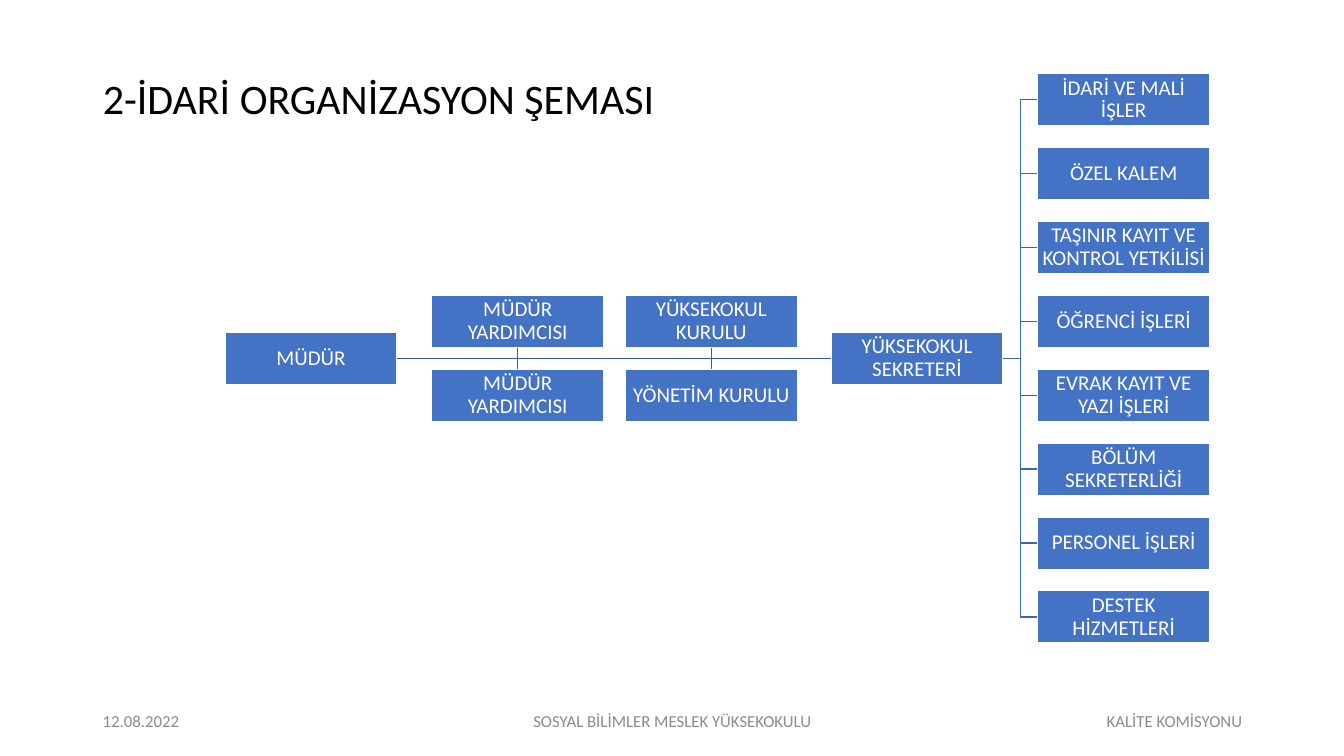
from lxml import etree
from pptx import Presentation
from pptx.dml.color import RGBColor
from pptx.enum import shapes, text
from pptx.oxml.ns import qn
from pptx.util import Inches, Pt

COLORS = {"box": "4472C4", "edge": "FFFFFF", "spine": "365B9D",
          "branch": "3E67B2", "title": "000000", "footer": "8C8C8C"}
FONT = "Calibri"
BOX_W, BOX_H = 1.71, 0.52
COLUMN_GAP, PAIR_GAP = 0.34, 0.21
SIDE, CENTER, END = text.PP_ALIGN.LEFT, text.PP_ALIGN.CENTER, text.PP_ALIGN.RIGHT
TOP, LEFT, BOTTOM, RIGHT = range(4)  # connection sites of a rectangle

DIRECTOR = "MÜDÜR"
SECRETARY = "YÜKSEKOKUL SEKRETERİ"
PAIRS = [("MÜDÜR YARDIMCISI", "MÜDÜR YARDIMCISI"),
         ("YÜKSEKOKUL KURULU", "YÖNETİM KURULU")]
UNITS = ["İDARİ VE MALİ İŞLER", "ÖZEL KALEM", "TAŞINIR KAYIT VE KONTROL YETKİLİSİ",
         "ÖĞRENCİ İŞLERİ", "EVRAK KAYIT VE YAZI İŞLERİ", "BÖLÜM SEKRETERLİĞİ",
         "PERSONEL İŞLERİ", "DESTEK HİZMETLERİ"]


def rgb(name):
    return RGBColor.from_string(COLORS[name])


def write(shape, words, size, color, align, spacing=1.0):
    frame = shape.text_frame
    frame.word_wrap = True
    frame.auto_size = text.MSO_AUTO_SIZE.NONE
    frame.vertical_anchor = text.MSO_ANCHOR.MIDDLE
    paragraph = frame.paragraphs[0]
    paragraph.alignment = align
    paragraph.line_spacing = spacing
    run = paragraph.add_run()
    run.text = words
    run.font.name = FONT
    run.font.size = Pt(size)
    run.font.color.rgb = rgb(color)


def add_unit(slide, words, left, top):
    """Add one box of the organisation chart."""
    unit = slide.shapes.add_shape(shapes.MSO_SHAPE.RECTANGLE, Inches(left), Inches(top),
                                  Inches(BOX_W), Inches(BOX_H))
    unit.shadow.inherit = False
    unit.fill.solid()
    unit.fill.fore_color.rgb = rgb("box")
    unit.line.color.rgb = rgb("edge")
    unit.line.width = Pt(1)
    frame = unit.text_frame
    frame.margin_left = frame.margin_right = Inches(0.01)
    frame.margin_top = frame.margin_bottom = Inches(0.01)
    write(unit, words, 15, "edge", CENTER, 0.9)
    return unit


def link(slide, start, start_site, end, end_site, color, kind=shapes.MSO_CONNECTOR.STRAIGHT):
    line = slide.shapes.add_connector(kind, 0, 0, 0, 0)
    line.begin_connect(start, start_site)
    line.end_connect(end, end_site)
    line.line.color.rgb = rgb(color)
    line.line.width = Pt(1)
    etree.SubElement(line._element.spPr, qn("a:effectLst"))


def add_title(slide, left, top, width, height):
    title = slide.shapes.title
    title.left, title.top = Inches(left), Inches(top)
    title.width, title.height = Inches(width), Inches(height)
    write(title, "2-İDARİ ORGANİZASYON ŞEMASI", 30, "title", SIDE, 0.9)


def add_footer(slide, left, top, width, height):
    side_width, middle_width = 3, 4.5
    parts = [("12.08.2022", left, side_width, SIDE),
             ("SOSYAL BİLİMLER MESLEK YÜKSEKOKULU",
              left + (width - middle_width) / 2, middle_width, CENTER),
             ("KALİTE KOMİSYONU", left + width - side_width, side_width, END)]
    for words, part_left, part_width, align in parts:
        part = slide.shapes.add_textbox(Inches(part_left), Inches(top),
                                        Inches(part_width), Inches(height))
        write(part, words, 12, "footer", align)


def add_org_chart(slide, left, top, width, height):
    """Lay out director, paired boards, secretary and units from left to right."""
    pitch = (height - BOX_H) / (len(UNITS) - 1)
    middle = top + (height - BOX_H) / 2
    units_left = left + width - BOX_W
    secretary_left = units_left - COLUMN_GAP - BOX_W

    director = add_unit(slide, DIRECTOR, left, middle)
    secretary = add_unit(slide, SECRETARY, secretary_left, middle)
    link(slide, director, RIGHT, secretary, LEFT, "spine")

    for column, (above, below) in enumerate(PAIRS):
        pair_left = left + BOX_W + COLUMN_GAP + column * (BOX_W + PAIR_GAP)
        upper = add_unit(slide, above, pair_left, middle - pitch / 2)
        lower = add_unit(slide, below, pair_left, middle + pitch / 2)
        link(slide, upper, BOTTOM, lower, TOP, "spine")

    for row, words in enumerate(UNITS):
        unit = add_unit(slide, words, units_left, top + row * pitch)
        link(slide, secretary, RIGHT, unit, LEFT, "branch", shapes.MSO_CONNECTOR.ELBOW)


def main():
    deck = Presentation()
    deck.slide_width, deck.slide_height = Inches(13.33), Inches(7.5)
    slide = deck.slides.add_slide(deck.slide_layouts[5])
    add_title(slide, 0.92, 0.4, 8.62, 1.2)
    add_org_chart(slide, 2.23, 0.73, 9.77, 5.65)
    add_footer(slide, 0.92, 6.95, 11.5, 0.4)
    deck.save("out.pptx")


if __name__ == "__main__":
    main()
